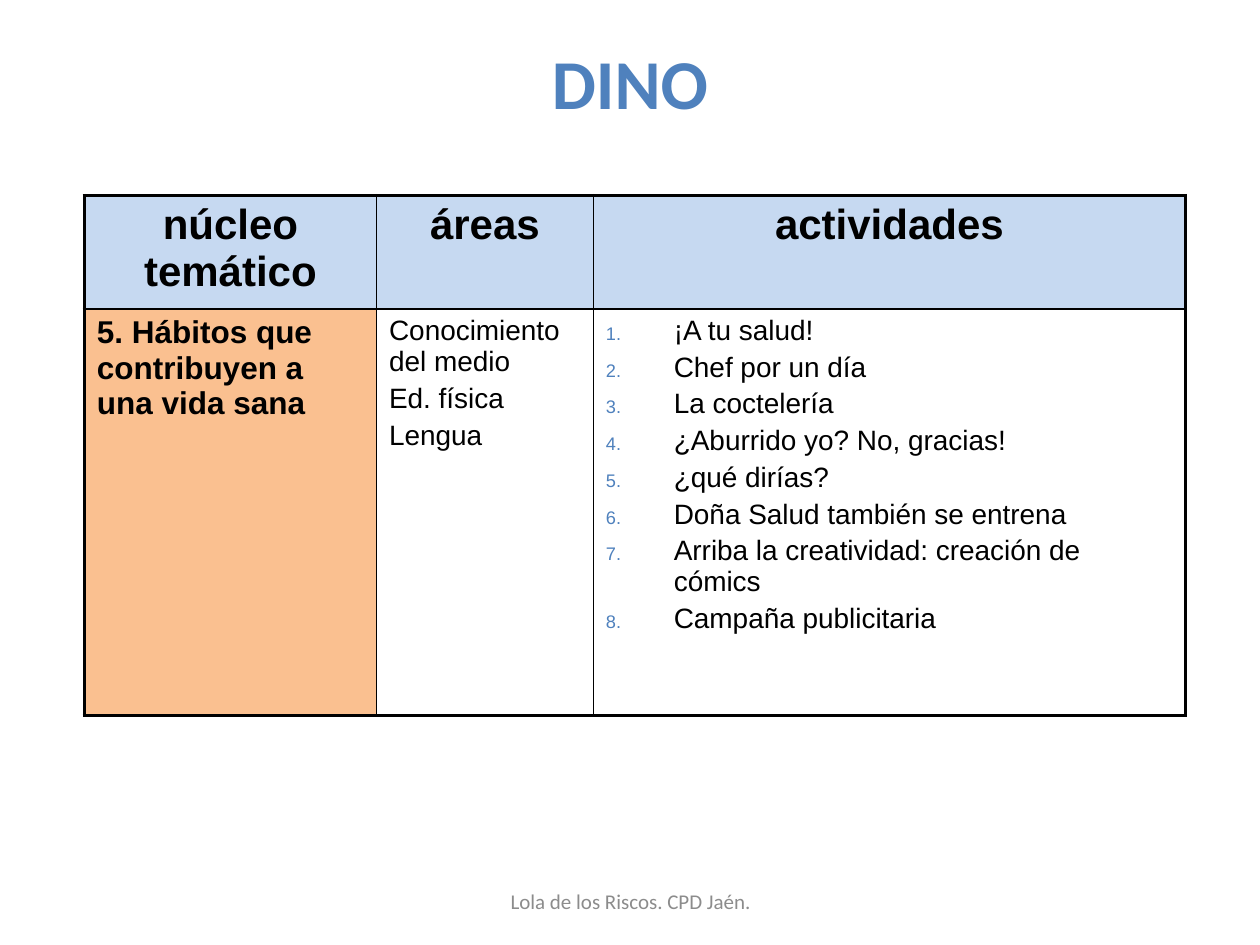
"""Build the DINO slide: a table of healthy-habit topics, areas and activities."""
from lxml import etree
from pptx import Presentation
from pptx.dml.color import RGBColor
from pptx.enum.text import MSO_ANCHOR, PP_ALIGN
from pptx.oxml.ns import qn
from pptx.util import Cm, Pt

CENTER, LEFT = PP_ALIGN.CENTER, PP_ALIGN.LEFT
MIDDLE = MSO_ANCHOR.MIDDLE
COLORS = {
    "blue": "4F81BD",
    "header": "C6D9F1",
    "topic": "FAC090",
    "black": "000000",
    "gray": "8C8C8C",
}


def write(frame, lines, size, font="Arial", color="black", bold=False,
          align=LEFT, spacing=0, numbered=False):
    frame.word_wrap = True
    for index, line in enumerate(lines):
        paragraph = frame.add_paragraph() if index else frame.paragraphs[0]
        paragraph.alignment = align
        paragraph.space_before = Pt(size * spacing)
        run = paragraph.add_run()
        run.text = line
        run.font.size = Pt(size)
        run.font.name = font
        run.font.bold = bold
        run.font.color.rgb = RGBColor.from_string(COLORS[color])
        if numbered:
            properties = paragraph._p.get_or_add_pPr()
            properties.set("marL", str(Cm(1.37)))
            properties.set("indent", str(-Cm(1.37)))
            bullet_color = etree.SubElement(properties, qn("a:buClr"))
            etree.SubElement(bullet_color, qn("a:srgbClr"), val=COLORS["blue"])
            etree.SubElement(properties, qn("a:buSzPct"), val="65000")
            etree.SubElement(properties, qn("a:buFont"), typeface="Arial")
            etree.SubElement(properties, qn("a:buAutoNum"), type="arabicPeriod")


def draw_borders(cell, widths):
    properties = cell._tc.get_or_add_tcPr()
    for side, width in widths.items():
        line = etree.SubElement(properties, qn(f"a:ln{side}"), w=str(Pt(width)))
        fill = etree.SubElement(line, qn("a:solidFill"))
        etree.SubElement(fill, qn("a:srgbClr"), val=COLORS["black"])


presentation = Presentation()
presentation.slide_width, presentation.slide_height = Cm(25.4), Cm(19.05)
slide = presentation.slides.add_slide(presentation.slide_layouts[6])

title = slide.shapes.add_textbox(Cm(1.27), Cm(0.76), Cm(22.86), Cm(1.75)).text_frame
title.vertical_anchor = MIDDLE
write(title, ["DINO"], 40, font="Calibri", color="blue", bold=True, align=CENTER)

column_widths = [5.89, 4.37, 11.94]
row_heights = [2.29, 8.2]
headings = ["núcleo temático", "áreas", "actividades"]
topic = ["5. Hábitos que contribuyen a una vida sana"]
areas = ["Conocimiento del medio", "Ed. física", "Lengua"]
activities = [
    "¡A tu salud!",
    "Chef por un día",
    "La coctelería",
    "¿Aburrido yo? No, gracias!",
    "¿qué dirías?",
    "Doña Salud también se entrena",
    "Arriba la creatividad: creación de cómics",
    "Campaña publicitaria",
]
header_format = {"size": 24, "bold": True, "align": CENTER}
rows = [
    [([heading], "header", header_format) for heading in headings],
    [
        (topic, "topic", {"size": 18, "bold": True}),
        (areas, None, {"size": 16}),
        (activities, None, {"size": 16, "numbered": True}),
    ],
]

plan = slide.shapes.add_table(
    len(rows), len(headings), Cm(1.7), Cm(3.94),
    Cm(sum(column_widths)), Cm(sum(row_heights))).table
plan.first_row = plan.horz_banding = False
for column, width in zip(plan.columns, column_widths):
    column.width = Cm(width)
for row, height in zip(plan.rows, row_heights):
    row.height = Cm(height)

OUTER, INNER = 2.25, 1
for r, row in enumerate(rows):
    for c, (lines, background, text_format) in enumerate(row):
        cell = plan.cell(r, c)
        draw_borders(cell, {
            "L": OUTER if c == 0 else INNER,
            "R": OUTER if c == len(headings) - 1 else INNER,
            "T": OUTER if r == 0 else INNER,
            "B": OUTER if r == len(rows) - 1 else INNER,
        })
        if background:
            cell.fill.solid()
            cell.fill.fore_color.rgb = RGBColor.from_string(COLORS[background])
        else:
            cell.fill.background()
        write(cell.text_frame, lines, spacing=0.2, **text_format)

footer = slide.shapes.add_textbox(Cm(8.69), Cm(17.65), Cm(8.05), Cm(1.02)).text_frame
footer.vertical_anchor = MIDDLE
write(footer, ["Lola de los Riscos. CPD Jaén."], 12, font="Calibri", color="gray", align=CENTER)

presentation.save("out.pptx")
